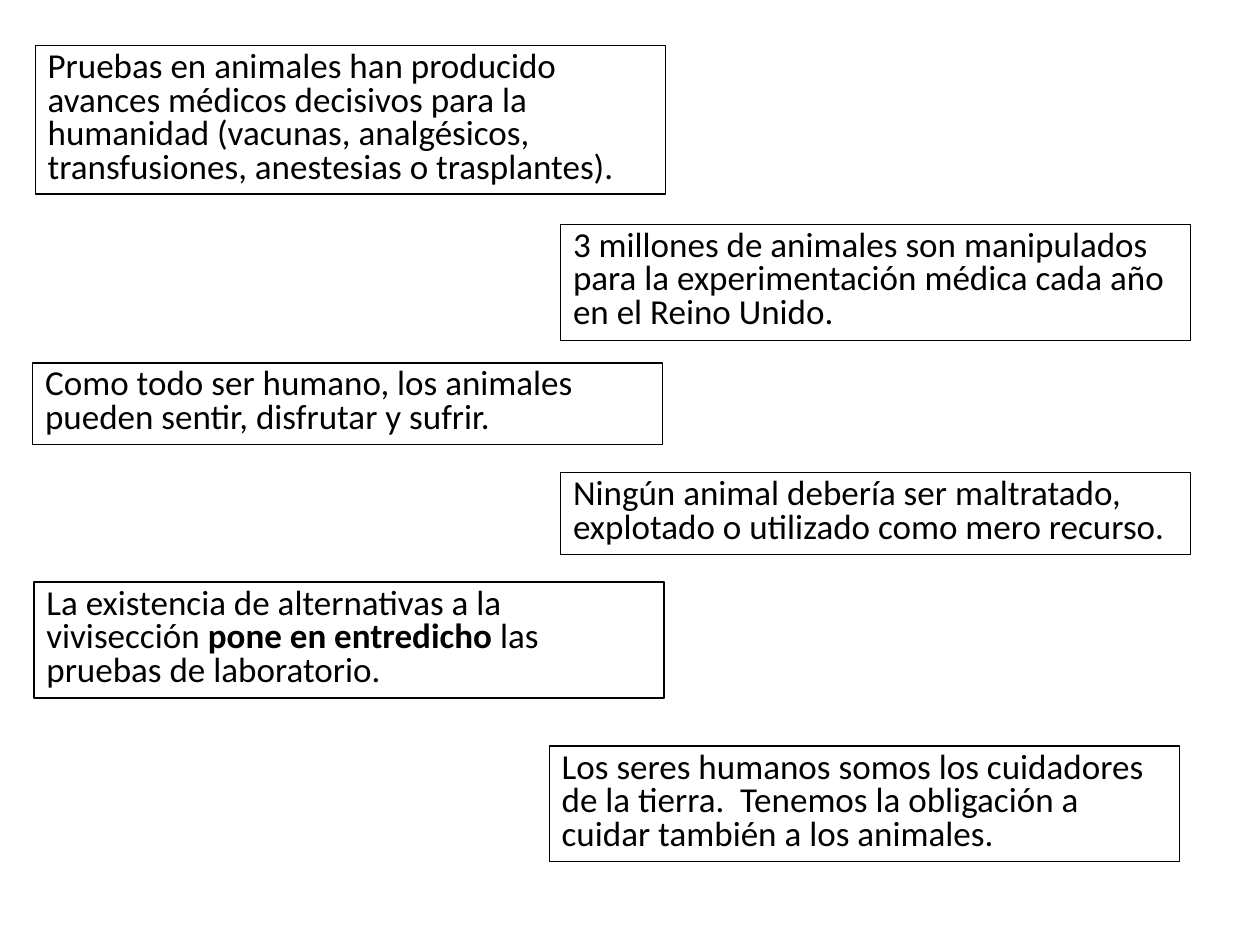
import pptx
import pptx.dml.color
import pptx.enum.text
import pptx.util
from pptx.util import Inches

COLORS = {"ink": "000000"}
WIDTH = 5

# Left, top, height, then the text as (words, bold) runs.
CLAIMS = [
    (0.28, 0.36, 1.18, [("Pruebas en animales han producido avances médicos decisivos para la humanidad (vacunas, analgésicos, transfusiones, anestesias o trasplantes).", False)]),
    (4.45, 1.78, 0.92, [("3 millones de animales son manipulados para la experimentación médica cada año en el Reino Unido.", False)]),
    (4.45, 3.75, 0.65, [("Ningún animal debería ser maltratado, explotado o utilizado como mero recurso.", False)]),
    (0.27, 4.62, 0.92, [("La existencia de alternativas a la vivisección ", False),
                        ("pone en entredicho ", True),
                        ("las pruebas de laboratorio.", False)]),
    (0.26, 2.88, 0.65, [("Como todo ser humano, los animales pueden sentir, disfrutar y sufrir.", False)]),
    (4.36, 5.92, 0.92, [("Los seres humanos somos los cuidadores de la tierra.  Tenemos la obligación a cuidar también a los animales.", False)]),
]


def color(name):
    return pptx.dml.color.RGBColor.from_string(COLORS[name])


def add_claim(slide, left, top, height, runs):
    """Add an outlined text box holding one claim."""
    box = slide.shapes.add_textbox(
        Inches(left), Inches(top), Inches(WIDTH), Inches(height))
    box.line.color.rgb = color("ink")
    box.line.width = pptx.util.Pt(0.75)
    frame = box.text_frame
    frame.word_wrap = True
    frame.auto_size = pptx.enum.text.MSO_AUTO_SIZE.SHAPE_TO_FIT_TEXT
    para = frame.paragraphs[0]
    para.line_spacing = 0.8
    para.font.name = "Calibri"
    para.font.size = pptx.util.Pt(20)
    para.font.color.rgb = color("ink")
    for words, bold in runs:
        run = para.add_run()
        run.text = words
        if bold:
            run.font.bold = True


def main():
    deck = pptx.Presentation()
    deck.slide_width, deck.slide_height = Inches(10), Inches(7.5)
    slide = deck.slides.add_slide(deck.slide_layouts[6])
    for claim in CLAIMS:
        add_claim(slide, *claim)
    deck.save("out.pptx")


if __name__ == "__main__":
    main()
